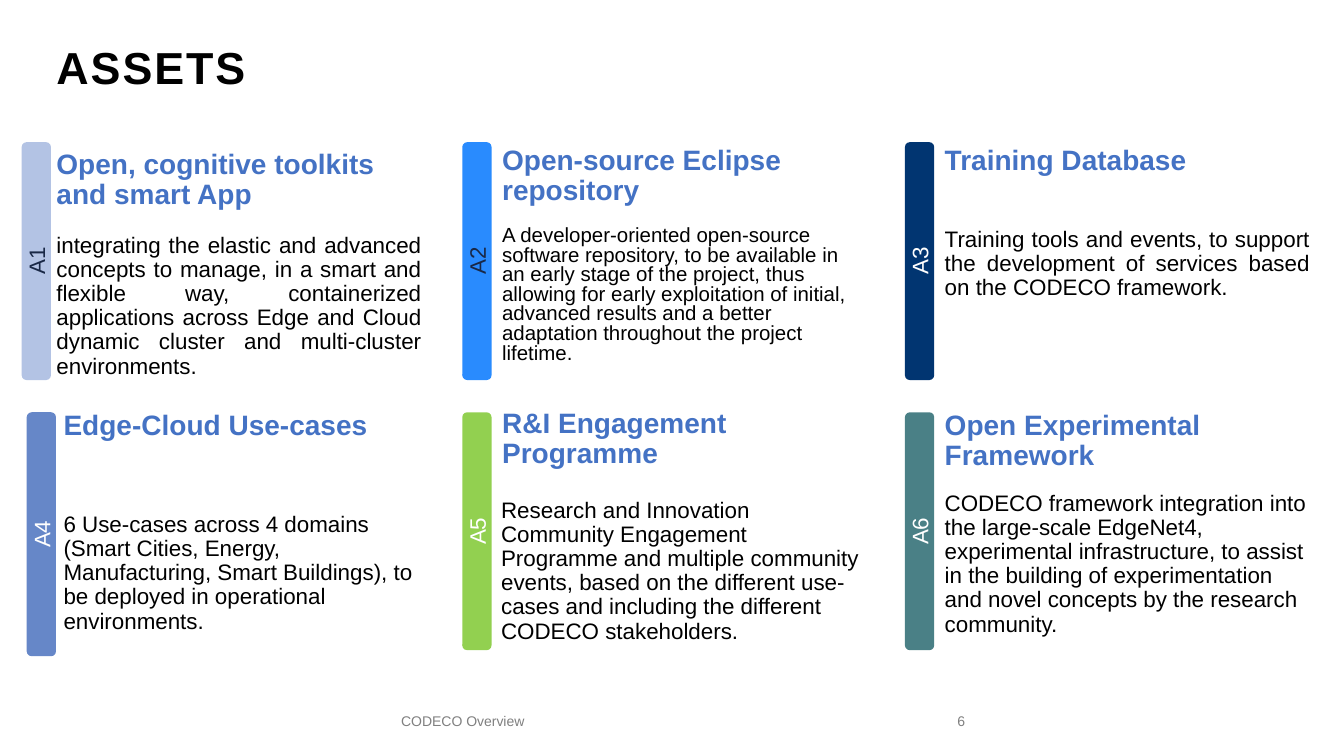
from dataclasses import dataclass

import pptx
import pptx.dml.color
import pptx.enum.shapes
import pptx.enum.text
import pptx.util

Inches = pptx.util.Inches
Pt = pptx.util.Pt
ALIGN = pptx.enum.text.PP_ALIGN
ANCHOR = pptx.enum.text.MSO_ANCHOR


@dataclass(frozen=True)
class Theme:
    font: str = "Arial"
    ink: str = "000000"
    heading: str = "4472C4"
    footer: str = "808080"
    navy: str = "192846"
    white: str = "FFFFFF"
    title_size: float = 32
    heading_size: float = 20
    body_size: float = 16
    compact_size: float = 14.6
    footer_size: float = 10


@dataclass(frozen=True)
class Asset:
    label: str
    heading: str
    body: str
    bar_color: str
    label_color: str
    bar_center: tuple
    heading_at: tuple
    body_at: tuple
    body_height: float
    bar_length: float = 2.36
    heading_anchor: ANCHOR = ANCHOR.BOTTOM
    body_align: ALIGN = ALIGN.LEFT
    body_size: float = Theme.body_size
    body_spacing: float = 0.9


ASSETS = [
    Asset("A1", "Open, cognitive toolkits and smart App",
          "integrating the elastic and advanced concepts to manage, in a smart "
          "and flexible way, containerized applications across Edge and Cloud "
          "dynamic cluster and multi-cluster environments.",
          "B3C3E4", Theme.navy, (0.36, 2.59), (0.56, 1.41), (0.56, 2.32), 1.45,
          body_align=ALIGN.JUSTIFY),
    Asset("A2", "Open-source Eclipse repository",
          "A developer-oriented open-source software repository, to be available "
          "in an early stage of the project, thus allowing for early exploitation "
          "of initial, advanced results and a better adaptation throughout the "
          "project lifetime.",
          "298BFE", Theme.navy, (4.73, 2.59), (4.98, 1.37), (4.98, 2.25), 1.49,
          body_size=Theme.compact_size, body_spacing=0.8),
    Asset("A3", "Training Database",
          "Training tools and events, to support the development of services "
          "based on the CODECO framework.",
          "013571", Theme.white, (9.12, 2.59), (9.37, 1.45), (9.37, 2.26), 0.83,
          heading_anchor=ANCHOR.TOP, body_align=ALIGN.JUSTIFY),
    Asset("A4", "Edge-Cloud Use-cases",
          "6 Use-cases across 4 domains (Smart Cities, Energy, Manufacturing, "
          "Smart Buildings), to be deployed in operational environments.",
          "6687C8", Theme.white, (0.41, 5.3), (0.63, 4.08), (0.63, 5.09), 1.2,
          bar_length=2.42, heading_anchor=ANCHOR.TOP),
    Asset("A5", "R&I Engagement Programme",
          "Research and Innovation Community Engagement Programme and multiple "
          "community events, based on the different use-cases and including the "
          "different CODECO stakeholders.",
          "92D050", Theme.white, (4.73, 5.27), (4.98, 3.98), (4.97, 4.95), 1.52),
    Asset("A6", "Open Experimental Framework",
          "CODECO framework integration into the large-scale EdgeNet4, "
          "experimental infrastructure, to assist in the building of "
          "experimentation and novel concepts by the research community.",
          "4A8086", Theme.white, (9.12, 5.27), (9.37, 4), (9.37, 4.88), 1.66),
]


class AssetSlide:
    TEXT_WIDTH = 3.62
    HEADING_HEIGHT = 0.68
    BAR_THICKNESS = 0.29

    def __init__(self, prs, theme):
        self.theme = theme
        self.s = prs.slides.add_slide(prs.slide_layouts.get_by_name("Title Only"))

    def set_text(self, sp, text, size, color, bold=False, align=ALIGN.LEFT,
                 anchor=ANCHOR.TOP, spacing=1.0, inset=(0.1, 0.05)):
        """Put one formatted paragraph into a shape and return it."""
        tf = sp.text_frame
        tf.text = text
        tf.word_wrap = True
        tf.auto_size = pptx.enum.text.MSO_AUTO_SIZE.NONE
        tf.vertical_anchor = anchor
        tf.margin_left = tf.margin_right = Inches(inset[0])
        tf.margin_top = tf.margin_bottom = Inches(inset[1])
        p = tf.paragraphs[0]
        p.alignment = align
        p.line_spacing = spacing
        font = p.runs[0].font
        font.name = self.theme.font
        font.size = Pt(size)
        font.bold = bold
        font.color.rgb = pptx.dml.color.RGBColor.from_string(color)
        return p

    def title(self, text):
        sp = self.s.shapes.title
        sp.left, sp.top = Inches(0.46), Inches(0.15)
        sp.width, sp.height = Inches(9.66), Inches(0.83)
        p = self.set_text(sp, text, self.theme.title_size, self.theme.ink,
                          bold=True, anchor=ANCHOR.BOTTOM, spacing=0.9)
        p.runs[0]._r.get_or_add_rPr().set("spc", "140")

    def text(self, at, width, height, text, size, color, **style):
        sp = self.s.shapes.add_textbox(Inches(at[0]), Inches(at[1]),
                                       Inches(width), Inches(height))
        self.set_text(sp, text, size, color, **style)

    def bar(self, center, length, label, fill, color):
        """Draw an upright rounded bar whose label reads upwards."""
        x, y = center
        sp = self.s.shapes.add_shape(
            pptx.enum.shapes.MSO_SHAPE.ROUNDED_RECTANGLE,
            Inches(x - length / 2), Inches(y - self.BAR_THICKNESS / 2),
            Inches(length), Inches(self.BAR_THICKNESS))
        sp.rotation = 270
        sp.shadow.inherit = False
        sp.fill.solid()
        sp.fill.fore_color.rgb = pptx.dml.color.RGBColor.from_string(fill)
        sp.line.fill.background()
        p = self.set_text(sp, label, self.theme.body_size, color,
                          align=ALIGN.CENTER, anchor=ANCHOR.MIDDLE)
        p.space_after = Pt(8)

    def asset(self, a):
        t = self.theme
        self.bar(a.bar_center, a.bar_length, a.label, a.bar_color, a.label_color)
        self.text(a.heading_at, self.TEXT_WIDTH, self.HEADING_HEIGHT, a.heading,
                  t.heading_size, t.heading, bold=True, anchor=a.heading_anchor,
                  spacing=0.9, inset=(0, 0))
        self.text(a.body_at, self.TEXT_WIDTH, a.body_height, a.body, a.body_size,
                  t.ink, align=a.body_align, spacing=a.body_spacing, inset=(0, 0))

    def footer(self, left, width, text, align):
        self.text((left, 6.95), width, 0.4, text, self.theme.footer_size,
                  self.theme.footer, align=align, anchor=ANCHOR.MIDDLE)


def main():
    prs = pptx.Presentation()
    prs.slide_width, prs.slide_height = Inches(13.33), Inches(7.5)
    slide = AssetSlide(prs, Theme())
    slide.title("ASSETS")
    for a in ASSETS:
        slide.asset(a)
    slide.footer(2.69, 3.8, "CODECO Overview", ALIGN.CENTER)
    slide.footer(6.67, 3, "6", ALIGN.RIGHT)
    prs.save("out.pptx")


if __name__ == "__main__":
    main()
